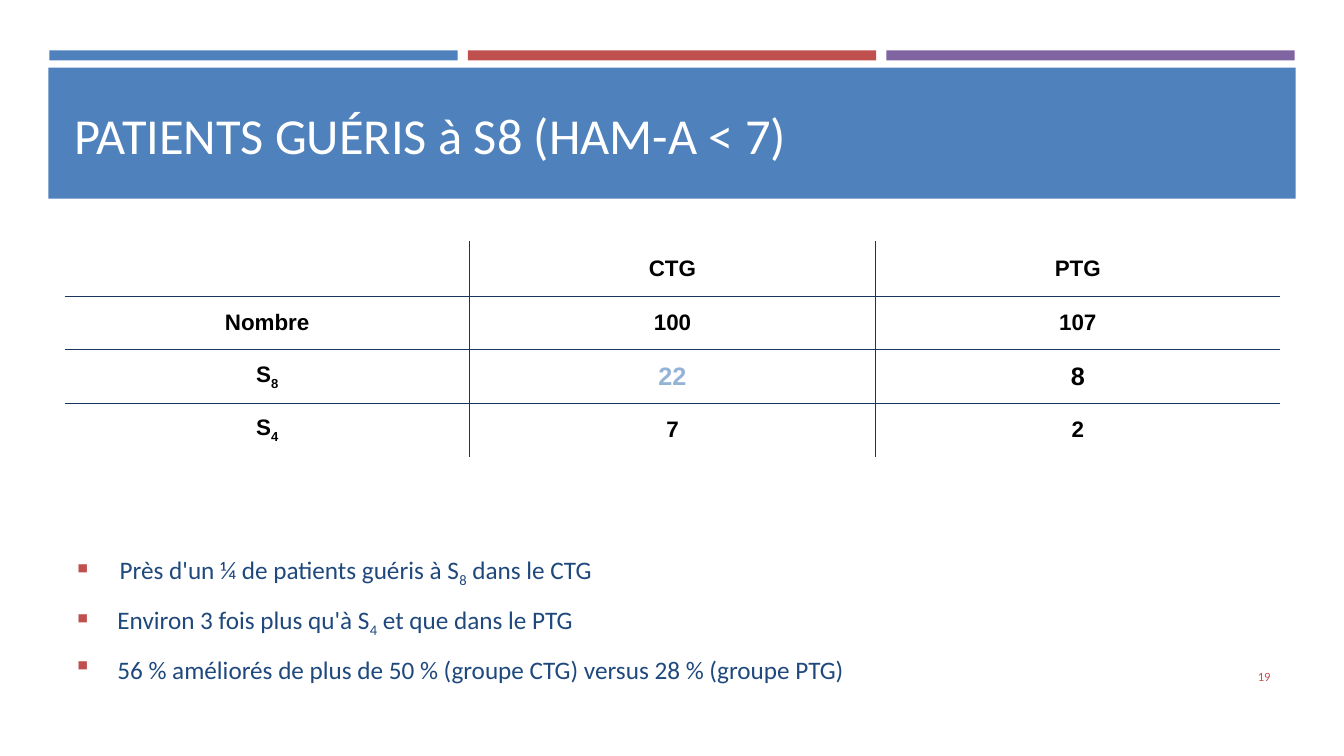
import pptx
import pptx.dml.color
import pptx.enum.shapes
import pptx.enum.text
import pptx.oxml
import pptx.oxml.ns
import pptx.util
from lxml import etree

Inches = pptx.util.Inches
Pt = pptx.util.Pt
Align = pptx.enum.text.PP_ALIGN
Anchor = pptx.enum.text.MSO_ANCHOR
qn = pptx.oxml.ns.qn

BLUE, RED, PURPLE = "4F81BD", "C0504D", "8064A2"
NAVY, RULE, PALE = "1F497D", "17375E", "95B3D7"
WHITE, BLACK = "FFFFFF", "000000"


def color(value):
    return pptx.dml.color.RGBColor.from_string(value)


class SlideBuilder:
    font = "Calibri"
    table_font = "Arial"

    def __init__(self, slide):
        self.slide = slide

    def run(self, paragraph, text, size, fill, font=None, bold=False, sub=False):
        run = paragraph.add_run()
        run.text = text
        run.font.name = font or self.font
        run.font.size = Pt(size)
        run.font.bold = bold
        run.font.color.rgb = color(fill)
        if sub:
            run.font._element.set("baseline", "-25000")

    def bar(self, left, top, width, height, fill):
        bar = self.slide.shapes.add_shape(
            pptx.enum.shapes.MSO_SHAPE.RECTANGLE,
            Inches(left), Inches(top), Inches(width), Inches(height))
        bar.shadow.inherit = False
        bar.fill.solid()
        bar.fill.fore_color.rgb = color(fill)
        bar.line.fill.background()

    def text_frame(self, left, top, width, height, anchor=Anchor.TOP):
        box = self.slide.shapes.add_textbox(
            Inches(left), Inches(top), Inches(width), Inches(height))
        box.text_frame.word_wrap = True
        box.text_frame.vertical_anchor = anchor
        return box.text_frame

    def line(self, box, text, size, fill, align=Align.LEFT):
        paragraph = box.paragraphs[0]
        paragraph.alignment = align
        self.run(paragraph, text, size, fill)

    def bullets(self, box, items, size, fill, bullet_fill):
        for index, runs in enumerate(items):
            paragraph = box.add_paragraph() if index else box.paragraphs[0]
            paragraph.space_before = Pt(11 if index else 0)
            props = paragraph._p.get_or_add_pPr()
            props.set("marL", str(Inches(0.38)))
            props.set("indent", str(-Inches(0.38)))
            bullet_color = etree.SubElement(props, qn("a:buClr"))
            etree.SubElement(bullet_color, qn("a:srgbClr"), val=bullet_fill)
            etree.SubElement(props, qn("a:buChar"), char="▪")
            for text, style in runs:
                self.run(paragraph, text, size, fill, **style)

    def borders(self, cell, edges):
        """Rule the given edges and leave the others empty."""
        props = cell._tc.get_or_add_tcPr()
        for edge in "LRTB":
            border = etree.SubElement(props, qn("a:ln" + edge), w=str(Pt(1)))
            if edge in edges:
                fill = etree.SubElement(border, qn("a:solidFill"))
                etree.SubElement(fill, qn("a:srgbClr"), val=RULE)
            else:
                etree.SubElement(border, qn("a:noFill"))

    def table(self, left, top, col_width, row_heights, rows):
        n_rows, n_cols = len(rows), len(rows[0])
        table = self.slide.shapes.add_table(
            n_rows, n_cols, Inches(left), Inches(top),
            Inches(col_width * n_cols), Inches(sum(row_heights))).table
        table.first_row = table.horz_banding = False
        for column in table.columns:
            column.width = Inches(col_width)
        for r, (height, row) in enumerate(zip(row_heights, rows)):
            table.rows[r].height = Inches(height)
            for c, runs in enumerate(row):
                cell = table.cell(r, c)
                inner = {"L": c > 0, "R": c < n_cols - 1,
                         "T": r > 0, "B": r < n_rows - 1}
                self.borders(cell, [edge for edge in inner if inner[edge]])
                cell.fill.background()
                cell.vertical_anchor = Anchor.MIDDLE
                cell.margin_left = cell.margin_right = Inches(0.16)
                paragraph = cell.text_frame.paragraphs[0]
                paragraph.alignment = Align.CENTER
                for text, style in runs:
                    look = {"size": 16, "fill": BLACK, **style}
                    self.run(paragraph, text, font=self.table_font, bold=True, **look)


def plain(text, **style):
    return [(text, style)]


def week(number):
    return [("S", {}), (number, {"sub": True})]


def main():
    deck = pptx.Presentation()
    deck.slide_width, deck.slide_height = Inches(13.33), Inches(7.5)
    page = SlideBuilder(deck.slides.add_slide(deck.slide_layouts[6]))

    # Three-colour strip and title band
    for i, fill in enumerate((BLUE, RED, PURPLE)):
        page.bar(0.49 + 4.15 * i, 0.5, 4.05, 0.1, fill)
    page.bar(0.48, 0.67, 12.37, 1.3, BLUE)
    title = page.text_frame(0.64, 0.57, 12.06, 1.11, Anchor.BOTTOM)
    page.line(title, "PATIENTS GUÉRIS à S8 (HAM-A < 7)", 36, WHITE)

    # Cured patients by group
    page.table(0.64, 2.39, 4.02, [0.55, 0.53, 0.53, 0.53], [
        [[], plain("CTG"), plain("PTG")],
        [plain("Nombre"), plain("100"), plain("107")],
        [week("8"), plain("22", size=18, fill=PALE), plain("8", size=18)],
        [week("4"), plain("7"), plain("2")],
    ])

    # Findings
    findings = page.text_frame(0.63, 5.45, 11.73, 1.31)
    page.bullets(findings, [
        [(" ", {"font": "DejaVu Sans"}), ("Près d'un ¼ de patients guéris à S", {}),
         ("8", {"sub": True}), (" dans le CTG", {})],
        [(" Environ 3 fois plus qu'à S", {}), ("4", {"sub": True}),
         (" et que dans le PTG", {})],
        plain(" 56 % améliorés de plus de 50 % (groupe CTG) versus 28 % (groupe PTG)"),
    ], 18, NAVY, RED)

    # Page number
    number = page.text_frame(11.55, 6.51, 1.15, 0.4, Anchor.MIDDLE)
    page.line(number, "19", 9, RED, Align.RIGHT)

    deck.save("out.pptx")


if __name__ == "__main__":
    main()
